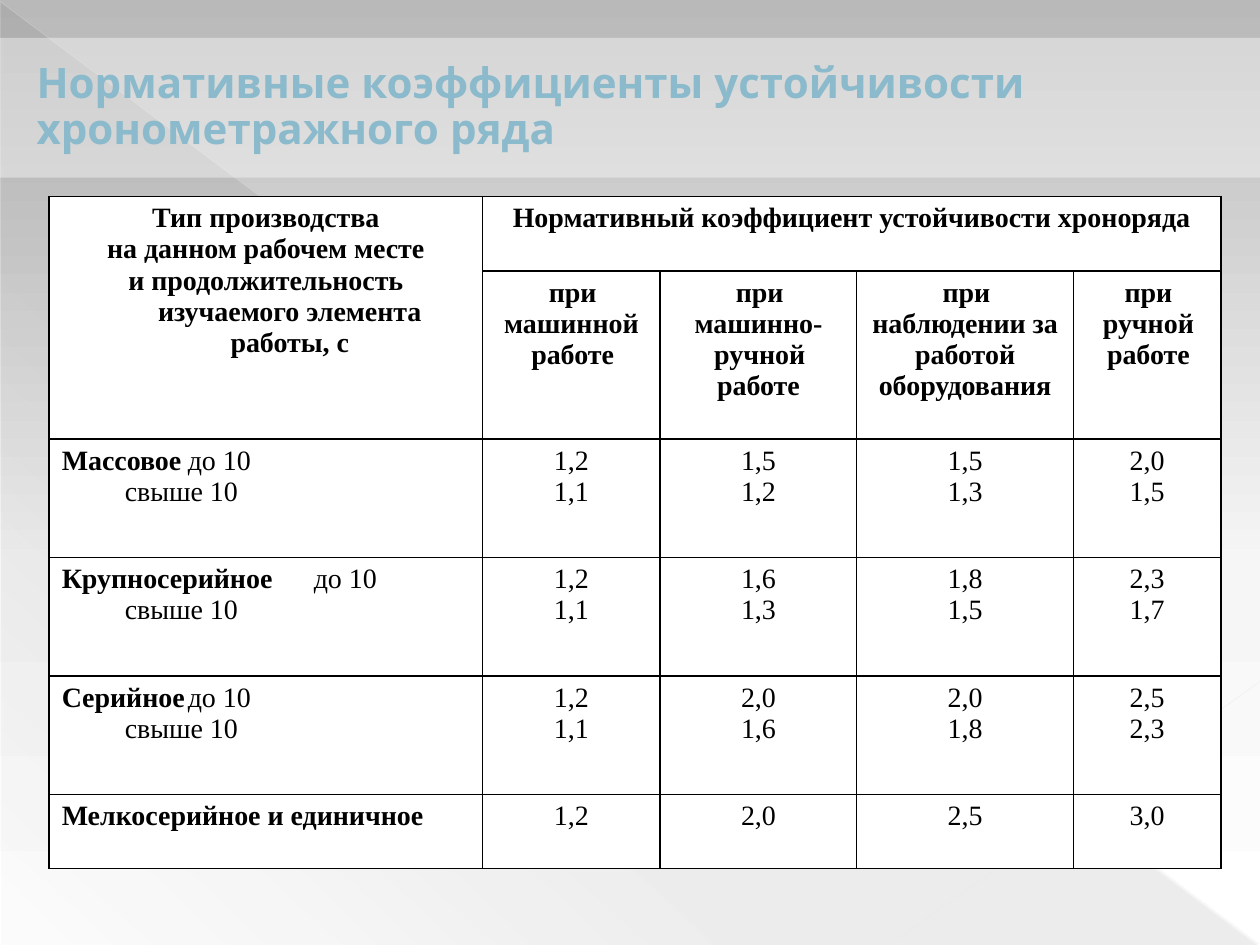
from lxml import etree
from pptx import Presentation
from pptx.dml.color import RGBColor
from pptx.enum.shapes import MSO_CONNECTOR, MSO_SHAPE
from pptx.enum.text import MSO_ANCHOR, MSO_AUTO_SIZE, PP_ALIGN
from pptx.oxml.ns import nsdecls, qn
from pptx.oxml import parse_xml
from pptx.util import Inches, Pt

LEFT, CENTER = PP_ALIGN.LEFT, PP_ALIGN.CENTER
TITLE_ONLY = 5

THEME = {
    "title_font": "League Spartan", "title_size": 24,
    "title": "8ABACB", "title_edge": "4C6F7A",
    "table_font": "Times New Roman", "table_size": 16,
    "ink": "000000", "paper": "FFFFFF",
    "background": [(0, "B9B9B9", 100), (60, "F6F6F6", 100), (100, "FFFFFF", 100)],
    "shade": [(0, "3B3B3B", 10), (70, "3B3B3B", 8), (100, "3B3B3B", 1)],
}

TITLE = "Нормативные коэффициенты устойчивости хронометражного ряда"
ROW_HEADER = ["Тип производства", "на данном рабочем месте",
              "и продолжительность изучаемого элемента работы, с"]
GROUP_HEADER = ["Нормативный коэффициент устойчивости хроноряда"]
COLUMN_HEADERS = [
    ["при машинной", "работе"],
    ["при машинно-", "ручной работе"],
    ["при наблюдении за работой оборудования"],
    ["при", "ручной", "работе"],
]
DURATIONS = ["до 10", "свыше 10"]
PRODUCTION = [
    ("Массовое", DURATIONS,
     [["1,2", "1,1"], ["1,5", "1,2"], ["1,5", "1,3"], ["2,0", "1,5"]]),
    ("Крупносерийное", DURATIONS,
     [["1,2", "1,1"], ["1,6", "1,3"], ["1,8", "1,5"], ["2,3", "1,7"]]),
    ("Серийное", DURATIONS,
     [["1,2", "1,1"], ["2,0", "1,6"], ["2,0", "1,8"], ["2,5", "2,3"]]),
    ("Мелкосерийное и единичное", [], [["1,2"], ["2,0"], ["2,5"], ["3,0"]]),
]
COLUMN_WIDTHS = [3.44, 1.41, 1.56, 1.72, 1.17]
ROW_HEIGHTS = [0.59, 1.3, 0.94, 0.94, 0.94, 0.59]
DURATION_TAB = 2.82

# start, end, colour, width in points, opacity in percent
MASTER_LINES = [
    ((0, 0.01), (9.99, 7.49), "EAE8E6", 0.39, 35),
    ((10, 5.41), (7.07, 7.49), "ECEAE8", 0.47, 45),
]


def gradient(stops, angle):
    marks = "".join(
        f'<a:gs pos="{position * 1000}"><a:srgbClr val="{color}">'
        f'<a:alpha val="{opacity * 1000}"/></a:srgbClr></a:gs>'
        for position, color, opacity in stops)
    return parse_xml(f'<a:gradFill {nsdecls("a")} rotWithShape="1"><a:gsLst>{marks}</a:gsLst>'
                     f'<a:lin ang="{angle * 60000}" scaled="0"/></a:gradFill>')


def paint(fill, color):
    fill.solid()
    fill.fore_color.rgb = RGBColor.from_string(color)


def set_opacity(properties, percent):
    """Make the first solid colour inside the properties see-through."""
    color = next(properties.iter(qn("a:srgbClr")))
    etree.SubElement(color, qn("a:alpha")).set("val", str(percent * 1000))


def set_gradient(owner, properties, stops, angle):
    """Swap a placeholder solid fill for a gradient with any number of stops."""
    paint(owner.fill, THEME["paper"])
    solid = next(properties.iter(qn("a:solidFill")))
    solid.getparent().replace(solid, gradient(stops, angle))


def add_backdrop(slide):
    background = slide.background
    set_gradient(background, slide.element, THEME["background"], 90)
    shade = slide.shapes.add_shape(MSO_SHAPE.RIGHT_TRIANGLE, Inches(0.01), Inches(0.02),
                                   Inches(9.98), Inches(7.48))
    shade.shadow.inherit = False
    shade.line.fill.background()
    set_gradient(shade, shade.element.spPr, THEME["shade"], 133)
    for start, end, color, width, opacity in MASTER_LINES:
        line = slide.shapes.add_connector(MSO_CONNECTOR.STRAIGHT,
                                          *map(Inches, start + end))
        line.line.width = Pt(width)
        paint(line.line.fill, color)
        properties = line.element.spPr
        set_opacity(properties, opacity)
        etree.SubElement(properties, qn("a:effectLst"))


def add_title(slide):
    title = slide.shapes.title
    slide.shapes.element.append(title.element)  # in front of the backdrop
    title.left, title.top = Inches(0), Inches(0.3)
    title.width, title.height = Inches(10), Inches(1.11)
    paint(title.fill, THEME["paper"])
    set_opacity(title.element.spPr, 40)
    frame = title.text_frame
    frame.text = TITLE
    frame.word_wrap = True
    frame.auto_size = MSO_AUTO_SIZE.NONE
    frame.vertical_anchor = MSO_ANCHOR.MIDDLE
    paragraph = frame.paragraphs[0]
    paragraph.alignment = LEFT
    paragraph.line_spacing = 0.9
    set_indent(paragraph, 0.19, 0)
    span = paragraph.runs[0]
    style(span.font, "title", bold=True)
    edge = parse_xml(f'<a:ln {nsdecls("a")} w="{Pt(0.5)}"><a:solidFill>'
                     f'<a:srgbClr val="{THEME["title_edge"]}"/></a:solidFill></a:ln>')
    span.font.fill  # the run properties exist once the font is styled
    span._r.get_or_add_rPr().insert(0, edge)


def style(font, role, bold):
    font.name = THEME[f"{role}_font"]
    font.size = Pt(THEME[f"{role}_size"])
    font.bold = bold
    font.color.rgb = RGBColor.from_string(THEME["title" if role == "title" else "ink"])


def set_indent(paragraph, margin, first_line):
    properties = paragraph._p.get_or_add_pPr()
    properties.set("marL", str(Inches(margin)))
    properties.set("indent", str(Inches(first_line)))


def fill_cell(cell, lines, bold=False, indent=(0.38, -0.38)):
    cell.text = "\n".join(lines)
    for paragraph in cell.text_frame.paragraphs:
        paragraph.alignment = CENTER
        set_indent(paragraph, *indent)
        style(paragraph.font, "table", bold)


def fill_production_cell(cell, name, durations):
    """Bold name on the left, durations lined up on a right tab."""
    frame = cell.text_frame
    for index in range(max(1, len(durations))):
        paragraph = frame.paragraphs[0] if index == 0 else frame.add_paragraph()
        paragraph.alignment = LEFT
        set_indent(paragraph, 0, 0)
        tabs = etree.SubElement(paragraph._p.get_or_add_pPr(), qn("a:tabLst"))
        etree.SubElement(tabs, qn("a:tab"), pos=str(Inches(DURATION_TAB)), algn="r")
        spans = [(name, True)] if index == 0 else []
        if durations:
            spans.append(("\t" + durations[index], False))
        for text, bold in spans:
            span = paragraph.add_run()
            span.text = text
            style(span.font, "table", bold)


def format_cell(cell):
    paint(cell.fill, THEME["paper"])
    properties = cell._tc.get_or_add_tcPr()
    for position, side in enumerate(("lnL", "lnR", "lnT", "lnB")):
        properties.insert(position, parse_xml(
            f'<a:{side} {nsdecls("a")} w="{Pt(1)}"><a:solidFill>'
            f'<a:srgbClr val="{THEME["ink"]}"/></a:solidFill></a:{side}>'))


def add_coefficients(slide):
    table = slide.shapes.add_table(
        len(ROW_HEIGHTS), len(COLUMN_WIDTHS), Inches(0.39), Inches(1.56),
        Inches(sum(COLUMN_WIDTHS)), Inches(sum(ROW_HEIGHTS))).table
    for column, width in zip(table.columns, COLUMN_WIDTHS):
        column.width = Inches(width)
    for row, height in zip(table.rows, ROW_HEIGHTS):
        row.height = Inches(height)
    for cell in table.iter_cells():
        format_cell(cell)
    table.cell(0, 0).merge(table.cell(1, 0))
    table.cell(0, 1).merge(table.cell(0, 4))
    fill_cell(table.cell(0, 0), ROW_HEADER, bold=True)
    fill_cell(table.cell(0, 1), GROUP_HEADER, bold=True)
    for column, lines in enumerate(COLUMN_HEADERS, 1):
        fill_cell(table.cell(1, column), lines, bold=True, indent=(0, 0.02))
    for row, (name, durations, values) in enumerate(PRODUCTION, 2):
        fill_production_cell(table.cell(row, 0), name, durations)
        for column, lines in enumerate(values, 1):
            fill_cell(table.cell(row, column), lines)


def main():
    deck = Presentation()
    deck.slide_width, deck.slide_height = Inches(10), Inches(7.5)
    slide = deck.slides.add_slide(deck.slide_layouts[TITLE_ONLY])
    add_backdrop(slide)
    add_title(slide)
    add_coefficients(slide)
    deck.save("out.pptx")


if __name__ == "__main__":
    main()
